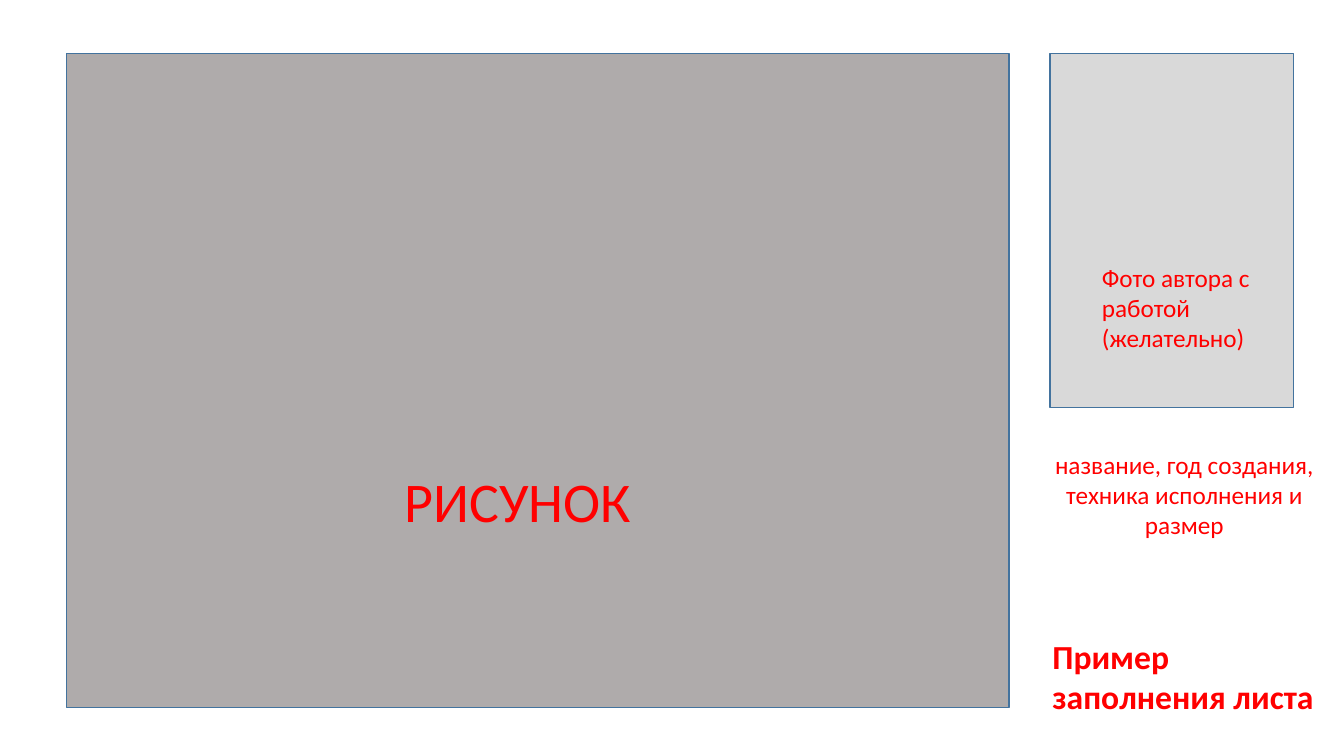
import pptx
import pptx.dml.color
import pptx.enum.shapes
import pptx.enum.text
import pptx.util

COLUMNS, ROWS = 160, 90
SLIDE_WIDTH = pptx.util.Inches(13.33)
SLIDE_HEIGHT = pptx.util.Inches(7.5)
RED = "FF0000"
OUTLINE = "43739E"
FRAME_TOP = 6.4
LEFT = pptx.enum.text.PP_ALIGN.LEFT
CENTER = pptx.enum.text.PP_ALIGN.CENTER


def color(hex_value):
    return pptx.dml.color.RGBColor.from_string(hex_value)


def place(left, top, width, height):
    column, row = SLIDE_WIDTH / COLUMNS, SLIDE_HEIGHT / ROWS
    return [round(length) for length in
            (left * column, top * row, width * column, height * row)]


def add_frame(page, area, fill):
    frame = page.shapes.add_shape(
        pptx.enum.shapes.MSO_SHAPE.RECTANGLE, *place(*area))
    frame.shadow.inherit = False
    frame.fill.solid()
    frame.fill.fore_color.rgb = color(fill)
    frame.line.color.rgb = color(OUTLINE)
    frame.line.width = pptx.util.Pt(1)


def add_caption(page, area, lines, size, bold=False, align=LEFT, wrap=True):
    box = page.shapes.add_textbox(*place(*area))
    content = box.text_frame
    content.word_wrap = wrap
    content.auto_size = pptx.enum.text.MSO_AUTO_SIZE.SHAPE_TO_FIT_TEXT
    for index, line in enumerate(lines):
        para = content.add_paragraph() if index else content.paragraphs[0]
        para.alignment = align
        span = para.add_run()
        span.text = line
        span.font.name = "Calibri"
        span.font.size = pptx.util.Pt(size)
        span.font.bold = bold
        span.font.color.rgb = color(RED)


def main():
    deck = pptx.Presentation()
    deck.slide_width = SLIDE_WIDTH
    deck.slide_height = SLIDE_HEIGHT
    page = deck.slides.add_slide(deck.slide_layouts.get_by_name("Blank"))

    add_frame(page, (7.9, FRAME_TOP, 112.2, 77.8), "AFABAB")
    add_caption(page, (47, 55, 62, 9.2), ["РИСУНОК"], 40)

    add_frame(page, (125, FRAME_TOP, 29, 42.1), "D9D9D9")
    add_caption(page, (130, 30.6, 29, 12.1),
                ["Фото автора с работой (желательно)"], 18)

    add_caption(page, (124.1, 75.1, 33.8, 10.9),
                ["Пример", "заполнения листа"], 24, bold=True, wrap=False)
    add_caption(page, (123, 52.9, 36, 12.1),
                ["название, год создания, техника исполнения и размер"],
                18, align=CENTER)

    deck.save("out.pptx")


if __name__ == "__main__":
    main()
